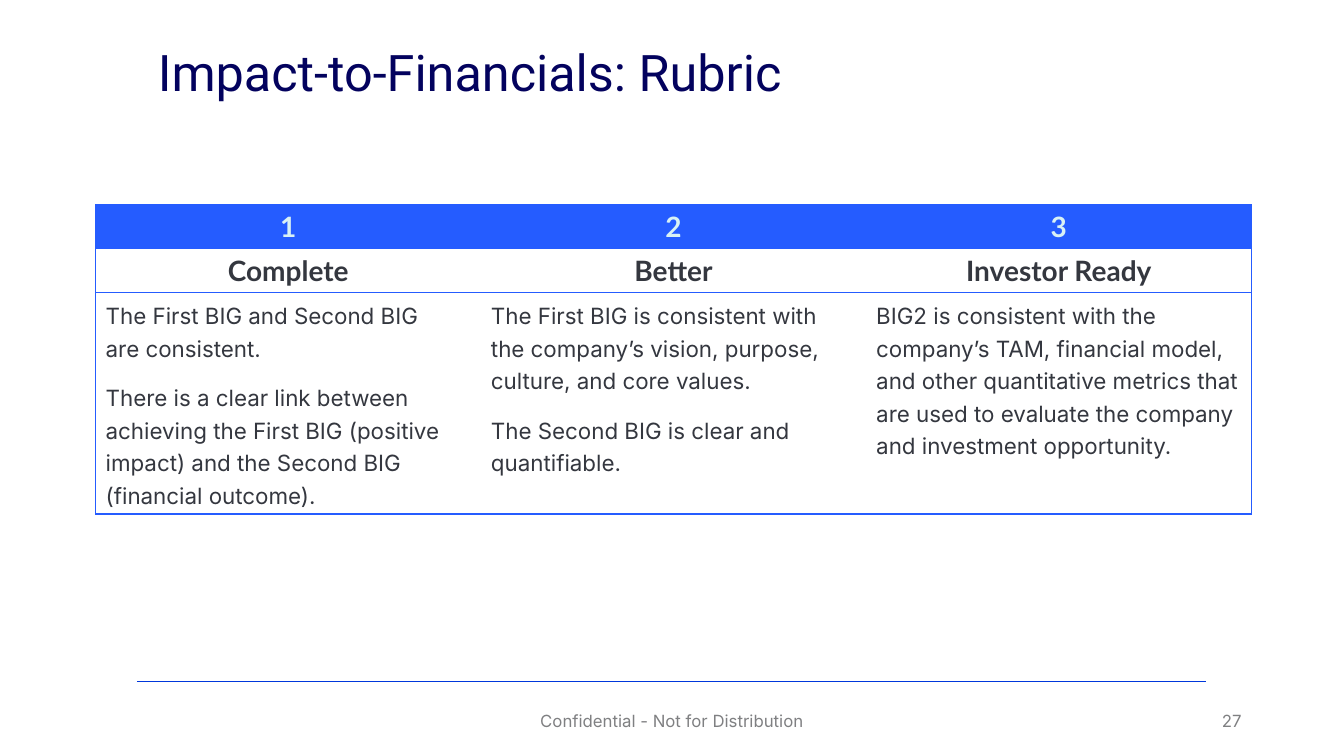
from lxml import etree
from pptx import Presentation
from pptx import util as u
from pptx.dml.color import RGBColor
from pptx.enum import shapes, text
from pptx.oxml.ns import qn

BLUE, NAVY, INK, GREY, ICE = "255CFF", "03025E", "34373F", "7F8082", "D9F1F4"
LEFT, CENTER, RIGHT = text.PP_ALIGN.LEFT, text.PP_ALIGN.CENTER, text.PP_ALIGN.RIGHT

RUBRIC = [
    ("1", "Complete", [
        "The First BIG and Second BIG \nare consistent.",
        "There is a clear link between achieving the First BIG (positive impact) "
        "and the Second BIG (financial outcome)."]),
    ("2", "Better", [
        "The First BIG is consistent with the company’s vision, purpose, culture, and core values.",
        "The Second BIG is clear and quantifiable."]),
    ("3", "Investor Ready", [
        "BIG2 is consistent with the company’s TAM, financial model, and other quantitative "
        "metrics that are used to evaluate the company and investment opportunity."]),
]


def rgb(value):
    """Turn a hex string into a colour."""
    return RGBColor.from_string(value)


def write(p, content, font, size, color, align=LEFT, bold=False):
    """Add the content to a paragraph, one run per line."""
    p.alignment = align
    for i, line in enumerate(content.split("\n")):
        if i:
            p.add_line_break()
        r = p.add_run()
        r.text = line
        r.font.name, r.font.size, r.font.bold = font, u.Pt(size), bold
        r.font.color.rgb = rgb(color)


def label(s, box, content, font, size, color, align=LEFT):
    """Place a vertically centred line of text in a box and return its paragraph."""
    tf = s.shapes.add_textbox(*map(u.Cm, box)).text_frame
    tf.word_wrap = True
    tf.vertical_anchor = text.MSO_ANCHOR.MIDDLE
    p = tf.paragraphs[0]
    write(p, content, font, size, color, align)
    return p


def style_cell(cell, fill, sides):
    """Fill a cell and draw blue borders on the named sides only."""
    cell.fill.solid()
    cell.fill.fore_color.rgb = rgb(fill)
    tcPr = cell._tc.get_or_add_tcPr()
    for i, side in enumerate("LRTB"):
        ln = etree.Element(qn(f"a:ln{side}"), w=str(u.Pt(1)))
        if side in sides:
            solid = etree.SubElement(ln, qn("a:solidFill"))
            etree.SubElement(solid, qn("a:srgbClr"), val=BLUE)
        else:
            etree.SubElement(ln, qn("a:noFill"))
        tcPr.insert(i, ln)


def rubric_table(s, left, top, width, heights):
    """Build the rubric with a number, a level and criteria in each column."""
    n = len(RUBRIC)
    table = s.shapes.add_table(len(heights), n, u.Cm(left), u.Cm(top),
                               u.Cm(width), u.Cm(sum(heights))).table
    for row, height in zip(table.rows, heights):
        row.height = u.Cm(height)
    for c, (number, level, criteria) in enumerate(RUBRIC):
        table.columns[c].width = u.Cm(width / n)
        sides = "TB" + ("L" if c == 0 else "") + ("R" if c == n - 1 else "")
        for r, fill in enumerate((BLUE, "FFFFFF", "FFFFFF")):
            style_cell(table.cell(r, c), fill, sides)
        for r, (content, color) in enumerate(((number, ICE), (level, INK))):
            write(table.cell(r, c).text_frame.paragraphs[0], content, "Lato", 20, color, CENTER, True)
        tf = table.cell(2, c).text_frame
        for i, content in enumerate(criteria):
            p = tf.add_paragraph() if i else tf.paragraphs[0]
            p.line_spacing = 1.2
            p.space_before, p.space_after = u.Pt(6 if i else 0), u.Pt(6)
            write(p, content, "Inter", 16, INK)


def footer(s, left, top, width):
    """Draw the rule with the notice and the page number below it."""
    rule = s.shapes.add_connector(shapes.MSO_CONNECTOR.STRAIGHT, u.Cm(left), u.Cm(top),
                                  u.Cm(left + width), u.Cm(top))
    rule.line.color.rgb = rgb("0037DB")
    rule.line.width = u.Pt(0.75)
    etree.SubElement(rule._element.spPr, qn("a:effectLst"))
    for dx, w, content, align in ((7.77, 11.43, "Confidential - Not for Distribution", CENTER),
                                  (20.47, 7.62, "27", RIGHT)):
        label(s, (left + dx, top + 0.48, w, 1.02), content, "Inter", 12, GREY, align)


def main():
    """Build and save the rubric slide."""
    prs = Presentation()
    prs.slide_width, prs.slide_height = u.Cm(33.87), u.Cm(19.05)
    s = prs.slides.add_slide(prs.slide_layouts[6])
    footer(s, 3.45, 17.17, 26.95)
    title = label(s, (3.73, 0.74, 28.6, 2.29), "Impact-to-Financials: Rubric", "Roboto", 36, NAVY)
    title.line_spacing = 0.9
    rubric_table(s, 2.41, 5.16, 29.13, (1.11, 1.11, 5.57))
    prs.save("out.pptx")


if __name__ == "__main__":
    main()
